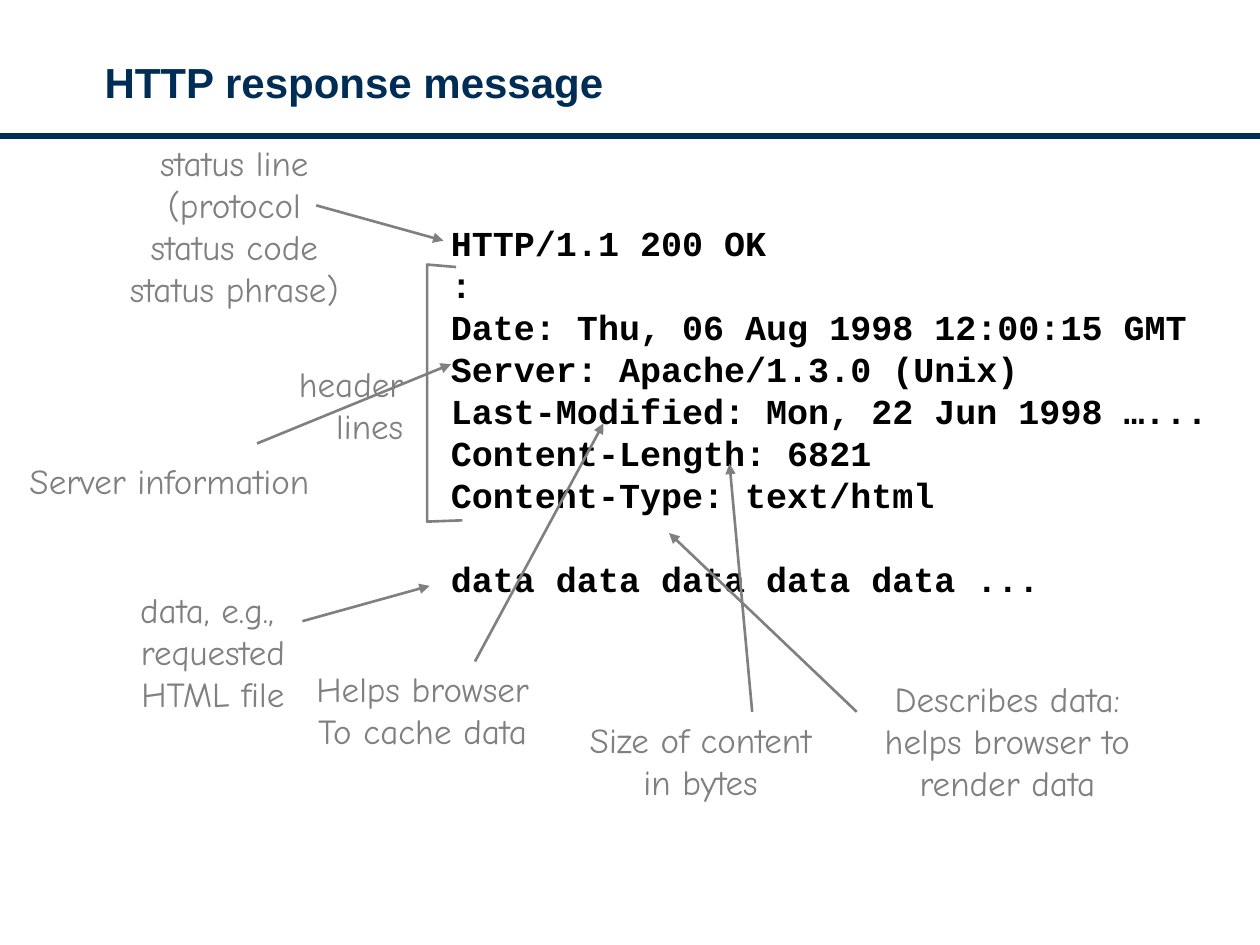
import pptx
import pptx.util
import pptx.dml.color
import pptx.enum.shapes
import pptx.enum.text
import pptx.oxml.ns
import lxml.etree
from pptx.util import Inches

NAVY = pptx.dml.color.RGBColor(0x00, 0x2D, 0x56)
GRAY = pptx.dml.color.RGBColor(0x80, 0x80, 0x80)
BLACK = pptx.dml.color.RGBColor(0x00, 0x00, 0x00)
WHITE = pptx.dml.color.RGBColor(0xFF, 0xFF, 0xFF)
ALIGN = pptx.enum.text.PP_ALIGN
LINE_PITCH = pptx.util.Pt(24)

MESSAGE_HEAD = [
    "HTTP/1.1 200 OK",
    ":",
    "Date: Thu, 06 Aug 1998 12:00:15 GMT",
    "Server: Apache/1.3.0 (Unix)",
    "Last-Modified: Mon, 22 Jun 1998 …...",
    "Content-Length: 6821",
    "Content-Type: text/html",
]
MESSAGE_BODY = "data data data data data ..."

# lines, box (left, top, width, height), wraps, alignment, arrow (x1, y1, x2, y2)
NOTES = [
    (["status line", "(protocol", "status code", "status phrase)"],
     (0.82, 1.07, 2.08, 1.43), False, ALIGN.CENTER, (2.51, 1.63, 3.52, 1.91)),
    (["header", "lines"],
     (2.19, 2.83, 1.11, 0.77), False, ALIGN.RIGHT, None),
    (["data, e.g., ", "requested", "HTML file"],
     (0.92, 4.62, 1.54, 1.1), False, ALIGN.CENTER, (2.4, 4.93, 3.41, 4.65)),
    (["Server information"],
     (0, 3.6, 2.69, 0.43), True, ALIGN.CENTER, (2.04, 3.52, 3.58, 2.89)),
    (["Describes data: helps browser to render data"],
     (6.65, 5.33, 2.69, 1.1), True, ALIGN.CENTER, (6.8, 5.65, 5.31, 4.23)),
    (["Helps browser", "To cache data"],
     (2.32, 5.25, 2.07, 0.77), False, ALIGN.CENTER, (3.77, 5.25, 4.79, 3.36)),
    (["Size of content", "in bytes"],
     (4.45, 5.65, 2.22, 0.77), False, ALIGN.CENTER, (5.97, 5.65, 5.79, 3.68)),
]


def inches(values):
    return [Inches(value) for value in values]


def write_lines(frame, lines, font_name, color, bold=False, align=ALIGN.LEFT):
    frame.text = "\n".join(lines)
    frame.vertical_anchor = pptx.enum.text.MSO_ANCHOR.TOP
    for paragraph in frame.paragraphs:
        paragraph.alignment = align
        paragraph.line_spacing = LINE_PITCH
        for run in paragraph.runs:
            run.font.name = font_name
            run.font.size = pptx.util.Pt(20)
            run.font.bold = bold
            run.font.color.rgb = color


def add_line(slide, ends, color, width, arrow=False):
    line = slide.shapes.add_connector(
        pptx.enum.shapes.MSO_CONNECTOR.STRAIGHT, *inches(ends))
    line.line.color.rgb = color
    line.line.width = pptx.util.Pt(width)
    properties = line._element.spPr
    if arrow:
        outline = properties.find(pptx.oxml.ns.qn("a:ln"))
        lxml.etree.SubElement(
            outline, pptx.oxml.ns.qn("a:tailEnd"), type="triangle")
    lxml.etree.SubElement(properties, pptx.oxml.ns.qn("a:effectLst"))


def add_heading(slide, box):
    heading = slide.shapes.add_textbox(*inches(box)).text_frame
    heading.word_wrap = True
    heading.margin_left = heading.margin_right = 0
    heading.margin_top = heading.margin_bottom = 0
    heading.text = "HTTP response message"
    font = heading.paragraphs[0].runs[0].font
    font.name = "Arial"
    font.size = pptx.util.Pt(24)
    font.bold = True
    font.color.rgb = NAVY
    add_line(slide, (0, 1.08, 10, 1.08), NAVY, 3)


def add_message(slide, box):
    panel = slide.shapes.add_shape(
        pptx.enum.shapes.MSO_SHAPE.RECTANGLE, *inches(box))
    panel.shadow.inherit = False
    panel.fill.solid()
    panel.fill.fore_color.rgb = WHITE
    panel.line.color.rgb = WHITE
    panel.line.width = pptx.util.Pt(0.75)
    frame = panel.text_frame
    frame.word_wrap = False
    write_lines(frame, MESSAGE_HEAD + [MESSAGE_BODY], "Courier New", BLACK, bold=True)
    frame.paragraphs[-1].space_before = LINE_PITCH


def add_header_bracket(slide, box):
    left, top, width, height = box
    builder = slide.shapes.build_freeform(
        Inches(left + width - 0.05), Inches(top + 0.02))
    builder.add_line_segments(
        [inches(point) for point in (
            (left, top), (left, top + height), (left + width, top + height - 0.01))],
        close=False)
    bracket = builder.convert_to_shape()
    bracket.shadow.inherit = False
    bracket.fill.background()
    bracket.line.color.rgb = GRAY
    bracket.line.width = pptx.util.Pt(1.5)


def add_note(slide, lines, box, wraps, align, arrow):
    frame = slide.shapes.add_textbox(*inches(box)).text_frame
    frame.word_wrap = wraps
    write_lines(frame, lines, "Comic Neue", GRAY, align=align)
    if arrow:
        add_line(slide, arrow, GRAY, 1.5, arrow=True)


def main():
    deck = pptx.Presentation()
    deck.slide_width, deck.slide_height = Inches(10), Inches(7.5)
    slide = deck.slides.add_slide(deck.slide_layouts[6])
    add_heading(slide, (0.83, 0.45, 8.5, 0.58))
    add_message(slide, (3.48, 1.71, 6.38, 3.11))
    add_header_bracket(slide, (3.39, 2.1, 0.28, 2.04))
    for note in NOTES:
        add_note(slide, *note)
    deck.save("out.pptx")


if __name__ == "__main__":
    main()
